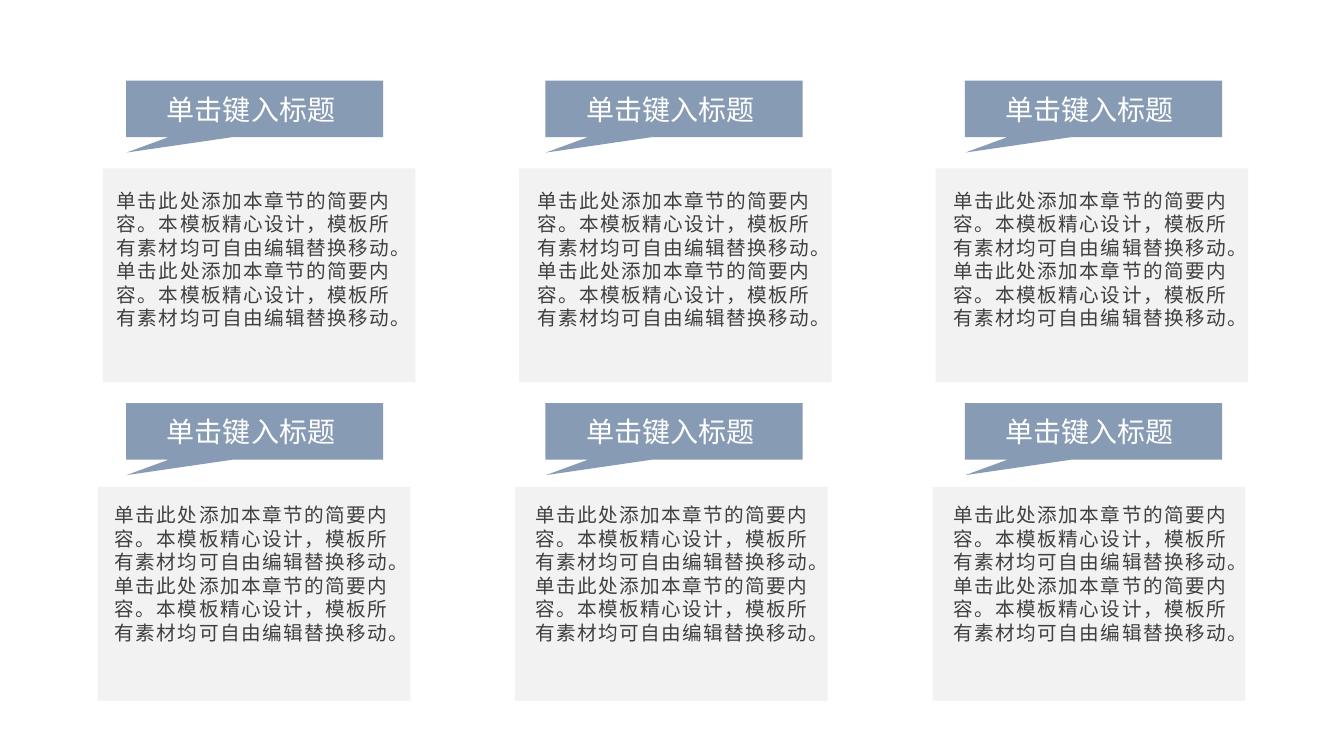
from pptx import Presentation
from pptx.dml.color import RGBColor
from pptx.enum.shapes import MSO_SHAPE as SHAPE
from pptx.enum.text import MSO_ANCHOR as ANCHOR, PP_ALIGN as ALIGN
from pptx.util import Inches, Pt

# Content
HEADING = "单击键入标题"
BODY = "单击此处添加本章节的简要内容。本模板精心设计，模板所有素材均可自由编辑替换移动。" * 2
COLORS = {"panel": "F2F2F2", "callout": "879BB5", "heading": "FFFFFF", "body": "404040"}
FONT = "Calibri"

# Layout in inches
CALLOUT_X = (1.25, 5.41, 9.57)
CALLOUT_W, CALLOUT_H = 2.55, 0.56
PANEL_W, PANEL_H = 3.1, 2.12
TEXT_W = 2.8
ROWS = [
    {"callout_y": 0.8, "panel_x": 1.02, "step": 4.13, "panel_y": 1.67,
     "text_x": (1.16, 5.33, 9.46), "text_y": 1.87},
    {"callout_y": 4, "panel_x": 0.97, "step": 4.14, "panel_y": 4.83,
     "text_x": (1.14, 5.31, 9.46), "text_y": 4.99},
]


def add_box(s, kind, box, fill, text, size, color, align, anchor, insets):
    """Add a filled shape with one paragraph; insets are left, top, right, bottom."""
    sp = s.shapes.add_shape(kind, *map(Inches, box))
    sp.shadow.inherit = False
    sp.fill.solid()
    sp.fill.fore_color.rgb = RGBColor.from_string(COLORS[fill])
    sp.line.fill.background()
    tf = sp.text_frame
    tf.word_wrap = True
    tf.vertical_anchor = anchor
    tf.margin_left, tf.margin_top, tf.margin_right, tf.margin_bottom = map(Inches, insets)
    p = tf.paragraphs[0]
    p.alignment = align
    p.font.name, p.font.size = FONT, Pt(size)
    p.font.color.rgb = RGBColor.from_string(COLORS[color])
    p.add_run().text = text
    return sp


prs = Presentation()
prs.slide_width, prs.slide_height = Inches(13.33), Inches(7.5)
s = prs.slides.add_slide(prs.slide_layouts[6])

# Panels with body text
for row in ROWS:
    for col, text_x in enumerate(row["text_x"]):
        x = row["panel_x"] + col * row["step"]
        left = text_x - x
        insets = (left, row["text_y"] - row["panel_y"], PANEL_W - left - TEXT_W, 0)
        sp = add_box(s, SHAPE.RECTANGLE, (x, row["panel_y"], PANEL_W, PANEL_H), "panel",
                     BODY, 14, "body", ALIGN.LEFT, ANCHOR.TOP, insets)
        # Letter spacing of one point
        r = sp.text_frame.paragraphs[0].runs[0]
        r.font._element.set("spc", "100")

# Callouts with headings
for row in ROWS:
    for x in CALLOUT_X:
        sp = add_box(s, SHAPE.RECTANGULAR_CALLOUT, (x, row["callout_y"], CALLOUT_W, CALLOUT_H),
                     "callout", HEADING, 20, "heading", ALIGN.CENTER, ANCHOR.MIDDLE,
                     (0, 0, 0.07, 0))
        sp.adjustments[0], sp.adjustments[1] = -0.498, 0.775

prs.save("out.pptx")
